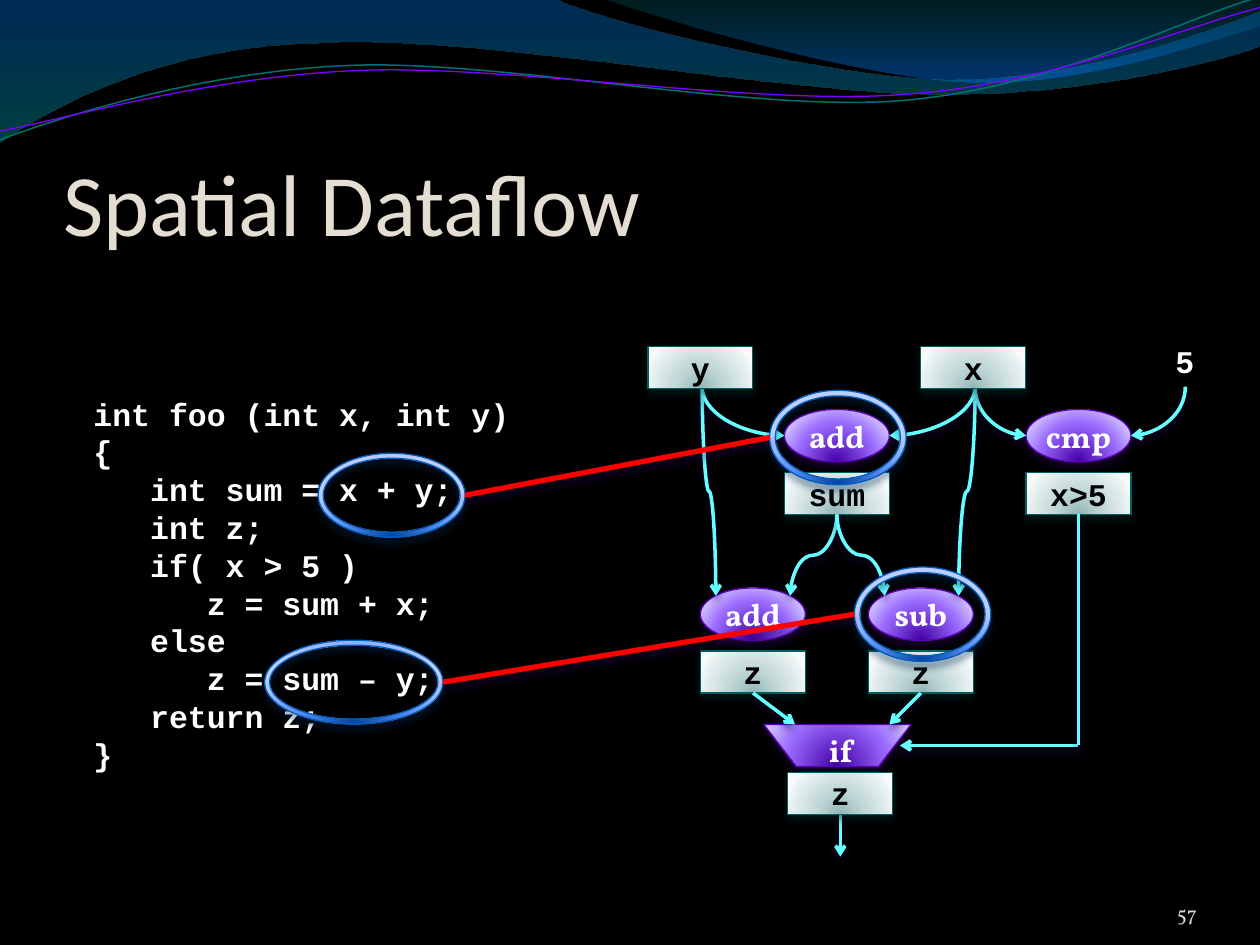
import math

from lxml import etree
from pptx import Presentation
from pptx import util as u
from pptx.dml.color import RGBColor
from pptx.enum import shapes, text
from pptx.oxml.ns import qn

Pt = u.Pt
SHAPE, LINK = shapes.MSO_SHAPE, shapes.MSO_CONNECTOR
ALIGN, ANCHOR = text.PP_ALIGN, text.MSO_ANCHOR

# Gradient stops: position, colour, opacity (all but colour in percent)
PURPLE = [(0, "4400A5", 100), (68, "9B6CFF", 100), (100, "CDBDFF", 100)]
TEAL = [(0, "93B7B7", 100), (43, "C2D8D8", 100), (93, "ECF3F3", 100), (100, "F9FBFB", 100)]
BLUE = [(0, "0044A5", 100), (68, "6C9BFF", 100), (100, "BDCDFF", 100)]


def rgb(value):
    return RGBColor.from_string(value)


def add(parent, tag, **attrs):
    return etree.SubElement(parent, qn(tag), {k: str(v) for k, v in attrs.items()})


def add_color(parent, color, opacity):
    add(add(parent, "a:srgbClr", val=color), "a:alpha", val=opacity * 1000)


def bends(points):
    """Split control points into cubic segments of three."""
    return [points[i:i + 3] for i in range(0, len(points), 3)]


def turn(points, center, degrees):
    cx, cy = center
    c, s = math.cos(math.radians(degrees)), math.sin(math.radians(degrees))
    return [(cx + (x - cx) * c - (y - cy) * s, cy + (x - cx) * s + (y - cy) * c)
            for x, y in points]


class Board:
    CODE, BODY, HEAD = "Courier New", "Vollkorn", "Calibri"
    FLOW = "66FFFF"
    SHADOW = "2D005A"

    def __init__(self, s):
        self.s = s

    def font(self, p, size, name, color, bold=False):
        p.font.size, p.font.name, p.font.bold = Pt(size), name, bold
        p.font.color.rgb = rgb(color)

    def margins(self, tf, left=0, top=0, right=0, bottom=0):
        tf.margin_left, tf.margin_top = Pt(left), Pt(top)
        tf.margin_right, tf.margin_bottom = Pt(right), Pt(bottom)

    def gradient(self, sp, stops, radial=True):
        sp.fill.background()
        blank = sp.element.spPr.find(qn("a:noFill"))
        grad = etree.Element(qn("a:gradFill"), {"rotWithShape": "1"})
        blank.getparent().replace(blank, grad)
        stop_list = add(grad, "a:gsLst")
        for pos, color, opacity in stops:
            add_color(add(stop_list, "a:gs", pos=pos * 1000), color, opacity)
        if radial:
            center = add(grad, "a:path", path="circle")
            add(center, "a:fillToRect", l=50000, t=130000, r=50000, b=-30000)
        else:
            add(grad, "a:lin", ang=5400000, scaled=1)

    def shadow(self, sp, color):
        spPr = sp.element.spPr
        effects = spPr.find(qn("a:effectLst"))
        if effects is None:
            effects = add(spPr, "a:effectLst")
        outer = add(effects, "a:outerShdw", blurRad=Pt(4.5), dist=Pt(3),
                    dir=5400000, rotWithShape=0)
        add_color(outer, color, 48)

    def glossy(self, sp, stops, edge, shade):
        self.gradient(sp, stops)
        sp.line.color.rgb, sp.line.width = rgb(edge), Pt(0.75)
        sp.shadow.inherit = False
        self.shadow(sp, shade)

    def title(self, value, x, y, w, h):
        sp = self.s.shapes.title
        sp.left, sp.top, sp.width, sp.height = Pt(x), Pt(y), Pt(w), Pt(h)
        tf = sp.text_frame
        tf.text = value
        tf.vertical_anchor = ANCHOR.BOTTOM
        self.margins(tf, top=3.6)
        tf.paragraphs[0].alignment = ALIGN.LEFT
        self.font(tf.paragraphs[0], 50, self.HEAD, "E3DED1")

    def label(self, value, x, y, w, h, name, wrap=False):
        tf = self.s.shapes.add_textbox(Pt(x), Pt(y), Pt(w), Pt(h)).text_frame
        tf.word_wrap = wrap
        tf.text = value
        for p in tf.paragraphs:
            self.font(p, 18, name, "FFFFFF", True)

    def page_number(self, value, x, y, w, h):
        tf = self.s.shapes.add_textbox(Pt(x), Pt(y), Pt(w), Pt(h)).text_frame
        tf.word_wrap, tf.vertical_anchor = True, ANCHOR.BOTTOM
        self.margins(tf)
        tf.text = value
        tf.paragraphs[0].alignment = ALIGN.RIGHT
        self.font(tf.paragraphs[0], 12, self.BODY, "D9D4C8")

    def node(self, value, kind, cx, y, h):
        sp = self.s.shapes.add_shape(kind, Pt(cx - 30), Pt(y), Pt(60), Pt(h))
        tf = sp.text_frame
        tf.text, tf.vertical_anchor = value, ANCHOR.MIDDLE
        self.margins(tf)
        tf.paragraphs[0].alignment = ALIGN.CENTER
        if kind == SHAPE.OVAL:
            self.glossy(sp, PURPLE, "5F00BD", self.SHADOW)
            self.font(tf.paragraphs[0], 18, self.BODY, "FFFFFF", True)
        else:
            self.glossy(sp, TEAL, "005F5F", "002D2D")
            self.font(tf.paragraphs[0], 18, self.CODE, "000000", True)

    def operator(self, value, cx, y):
        self.node(value, SHAPE.OVAL, cx, y, 30)

    def value(self, value, cx, y):
        self.node(value, SHAPE.RECTANGLE, cx, y, 24)

    def ring(self, x, y, w, h):
        sp = self.s.shapes.add_shape(SHAPE.DONUT, Pt(x), Pt(y), Pt(w), Pt(h))
        sp.adjustments[0] = 0.06
        self.glossy(sp, BLUE, "005FBD", "002D5A")

    def outline(self, start, segments, close=True):
        """Segments hold one point for a line or three for a cubic curve."""
        pts = [(Pt(x), Pt(y)) for segment in segments for x, y in segment]
        fb = self.s.shapes.build_freeform(Pt(start[0]), Pt(start[1]))
        fb.add_line_segments(pts, close=close)
        sp = fb.convert_to_shape()
        sp.shadow.inherit = False
        steps = iter(list(sp.element.iter(qn("a:lnTo"))))
        for segment in segments:
            parts = [next(steps) for _ in segment]
            if len(parts) == 3:
                cubic = etree.Element(qn("a:cubicBezTo"))
                parts[0].addprevious(cubic)
                for part in parts:
                    cubic.append(part[0])
                    part.getparent().remove(part)
        return sp

    def band(self, start, segments, stops):
        sp = self.outline(start, segments)
        self.gradient(sp, stops, radial=False)
        sp.line.fill.background()

    def wave(self, points, center, color, width):
        tilt = 2.7
        flat = turn(points, center, tilt)
        sp = self.outline(flat[0], bends(flat[1:]), close=False)
        sp.rotation = 360 - tilt
        sp.fill.background()
        sp.line.color.rgb, sp.line.width = rgb(color), Pt(width)

    def line(self, x1, y1, x2, y2, color=FLOW, width=2, arrow=True, kind=LINK.STRAIGHT):
        sp = self.s.shapes.add_connector(kind, Pt(x1), Pt(y1), Pt(x2), Pt(y2))
        sp.line.color.rgb, sp.line.width = rgb(color), Pt(width)
        if arrow:
            add(sp.element.spPr.find(qn("a:ln")), "a:tailEnd", type="arrow")
        self.shadow(sp, self.SHADOW)
        return sp

    def curve(self, x1, y1, x2, y2, preset):
        """Connector that leaves downwards: a sideways box, turned a quarter."""
        cx, cy = (x1 + x2) / 2, (y1 + y2) / 2
        dx, dy = abs(x2 - x1) / 2, (y2 - y1) / 2
        sp = self.line(cx - dy, cy - dx, cx + dy, cy + dx, kind=LINK.CURVE)
        xfrm = sp.element.spPr.find(qn("a:xfrm"))
        xfrm.set("rot", str((90 if x2 < x1 else 270) * 60000))
        if x2 > x1:
            xfrm.set("flipH", "1")
        sp.element.spPr.find(qn("a:prstGeom")).set("prst", preset)


def main():
    prs = Presentation()
    prs.slide_width, prs.slide_height = Pt(720), Pt(540)
    s = prs.slides.add_slide(prs.slide_layouts[5])
    s.background.fill.solid()
    s.background.fill.fore_color.rgb = rgb("000000")
    b = Board(s)

    # Header bands and waves
    upper = [(342.7, 12.2), (478, 45.4), (546, 45.4), (614, 45.4), (690, 18.7), (720, 6.5)]
    lower = [(708, 31.7), (626, 54.7), (537, 54), (448, 54), (275, 20.2), (185, 24.5),
             (93, 26), (33, 59.8), (-0.7, 81.4)]
    b.band((0, 0), [[(316.8, -0.7)], *bends(upper), [(720.7, 26)], *bends(lower), [(0, 0)]],
           [(0, "005FBD", 45), (100, "007474", 55)])
    corner = [(366.5, 8), (491, 44.6), (553.7, 46.8), (616.3, 49.7), (692, 23), (720, 15)]
    b.band((344.9, -0.7), [*bends(corner), [(720, 0)], [(344.9, -0.7)]],
           [(0, "005F5F", 30), (80, "0071E1", 45)])
    b.wave([(0, 79.9), (34.6, 67), (113.8, 41), (199.4, 37.4), (284.4, 33.8), (427, 64),
            (513.4, 57.6), (599.8, 51), (675.4, 10.8), (718.6, -1.4)],
           (359.3, 41.4), "007171", 0.85)
    b.wave([(0, 74.9), (33.8, 69), (118, 44), (203.8, 40.3), (290.2, 36.7), (429.8, 60.5),
            (516.2, 54), (602, 48.2), (677.5, 15), (720, 4.3)],
           (359.6, 42.5), "8000FF", 0.75)

    # Title and page number
    b.title("Spatial Dataflow", 36, 55.2, 654, 90)
    b.page_number("57", 624, 500.5, 60, 28.5)

    # Operators and their results
    for op, result, cx, y in [("add", "sum", 478.2, 234), ("cmp", "x>5", 616.3, 234),
                              ("add", "z", 430.2, 336), ("sub", "z", 526.2, 336)]:
        b.operator(op, cx, y)
        b.value(result, cx, y + 36)

    # Selector
    sp = b.outline((436.4, 438), [[(455, 414)], [(502, 414)], [(520.6, 438)], [(436.4, 438)]])
    sp.rotation = 180
    b.glossy(sp, PURPLE, "5F00BD", b.SHADOW)
    b.label("if", 466.5, 414, 29, 29, b.BODY, wrap=True)

    # Dataflow edges
    b.line(616.3, 426, 514.3, 426)
    b.line(616.3, 294, 616.3, 426, arrow=False)
    for x2 in (451.5, 505.5):
        b.curve(478.2, 294, x2, 340.5, "curvedConnector3")
    b.label("5", 664.5, 192, 26, 29, b.CODE)
    for x1, x2 in [(557.2, 586.3), (677.3, 646.3)]:
        b.curve(x1, 221, x2, 249, "curvedConnector2")
    for x1, x2 in [(401.2, 409), (557.2, 547.8)]:
        b.curve(x1, 221, x2, 340.5, "curvedConnector3")
    for x1, x2 in [(557.2, 508.2), (401.2, 448.2)]:
        b.curve(x1, 221, x2, 249, "curvedConnector2")
    b.line(430.3, 396, 454.3, 414)
    b.line(526.3, 396, 508.3, 414)

    # Source code
    code = ["int foo (int x, int y)", "{", "   int sum = x + y;", "   int z;", "   if( x > 5 )",
            "      z = sum + x;", "   else", "      z = sum – y;", "   return z;", "}"]
    b.label("\n".join(code), 46.3, 222, 254, 225, b.CODE)

    # Inputs
    b.value("x", 556.2, 198)
    b.value("y", 400.2, 198)

    # Rings that tie expressions to operators
    for target, source in [((439.8, 223, 78, 54), (181.8, 259, 84, 48)),
                           ((488.2, 324, 78, 54), (151.2, 365.8, 102, 48))]:
        b.ring(*target)
        b.ring(*source)
        x, y, w, h = source
        b.line(x + w, y + h / 2, target[0], target[1] + target[3] / 2, "FF0000", 3, arrow=False)

    # Output
    b.line(480.2, 465.3, 480.2, 489.5)
    b.value("z", 480.2, 441.3)
    prs.save("out.pptx")


if __name__ == "__main__":
    main()
